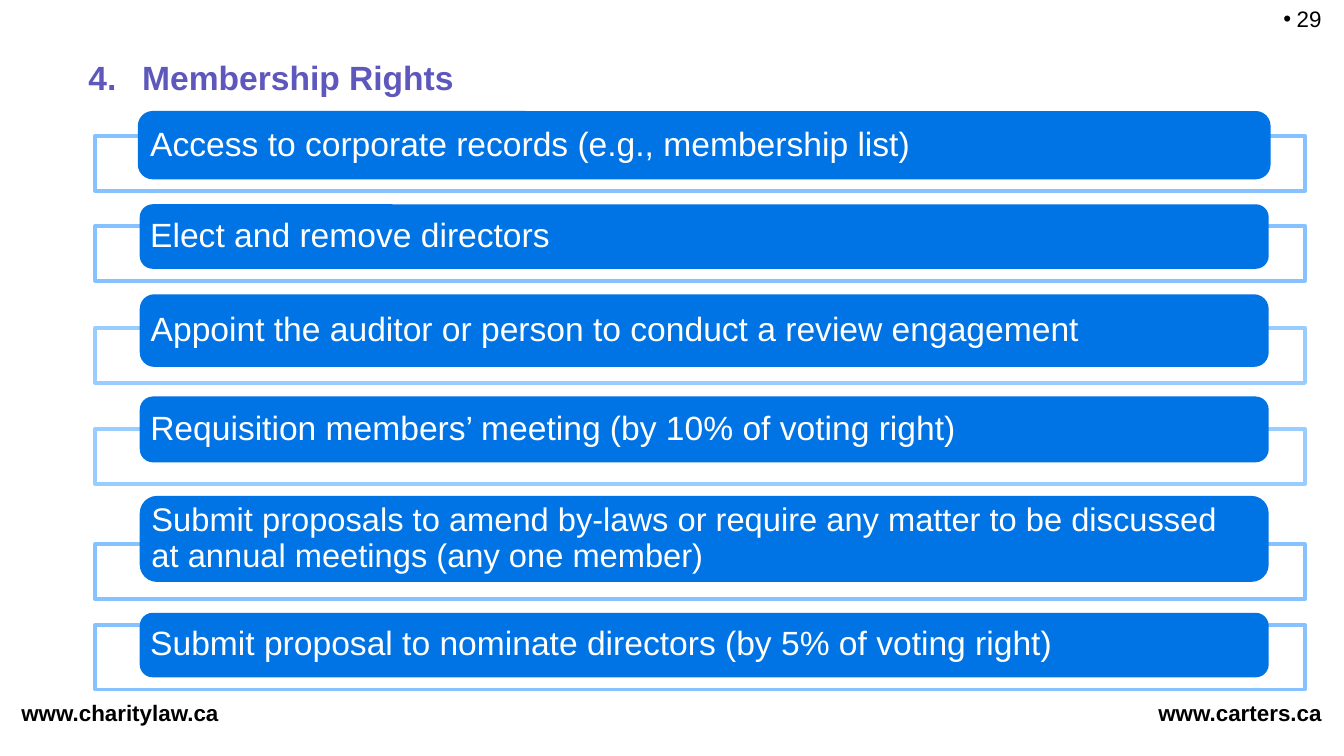
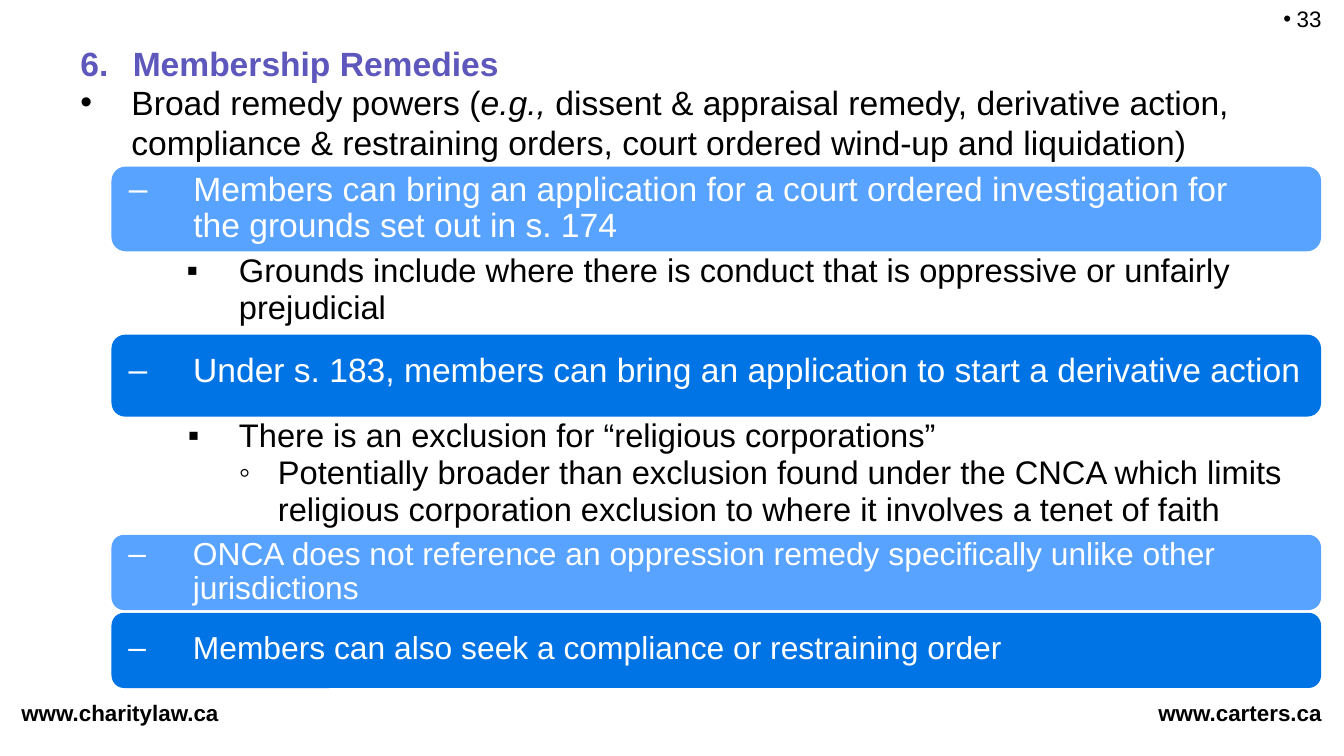
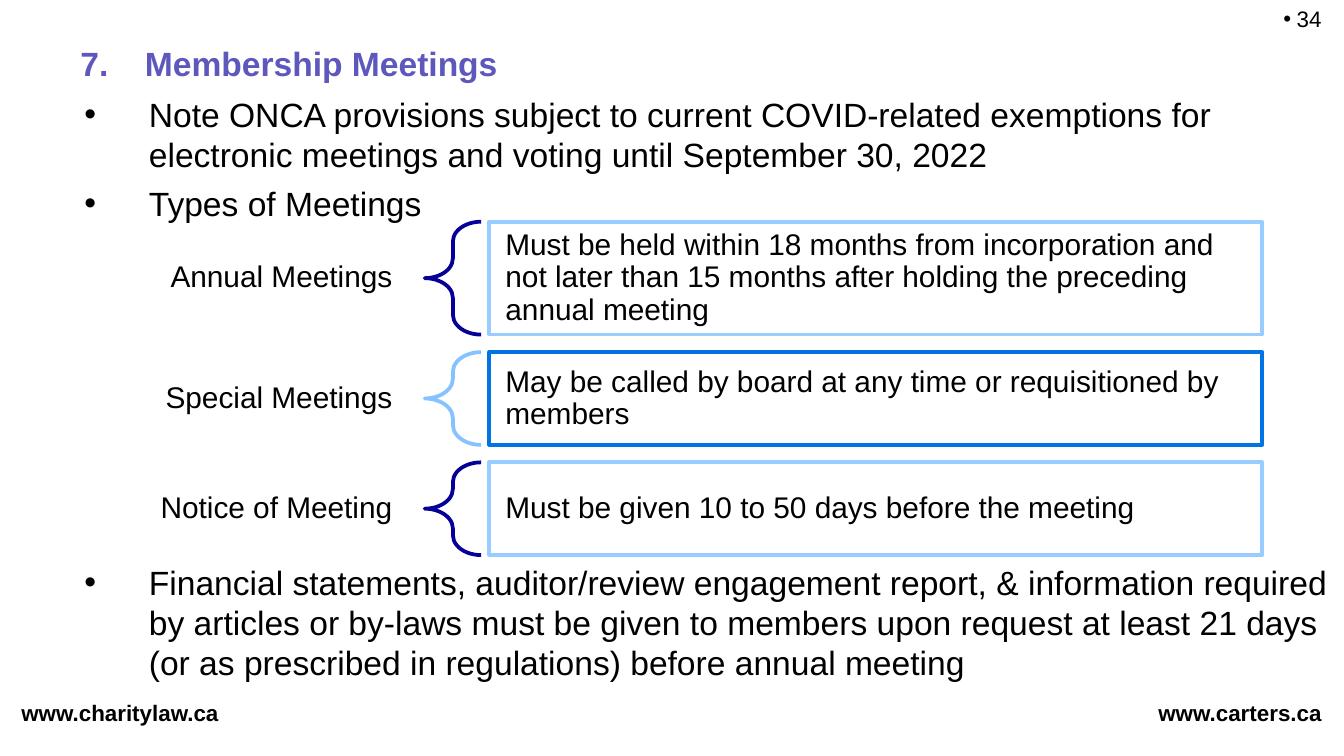
from lxml.etree import SubElement
from pptx import Presentation
from pptx.dml.color import RGBColor
from pptx.enum.shapes import MSO_SHAPE
from pptx.enum.text import MSO_ANCHOR, PP_ALIGN
from pptx.oxml.ns import qn
from pptx.util import Inches, Pt

FONT = "Arial"
BLACK = RGBColor(0x00, 0x00, 0x00)
WHITE = RGBColor(0xFF, 0xFF, 0xFF)
TITLE_PURPLE = RGBColor(0x5F, 0x58, 0xBC)
BLUE = RGBColor(0x00, 0x73, 0xE5)
MID_BLUE = RGBColor(0x58, 0xA3, 0xFF)
LIGHT_BLUE = RGBColor(0x85, 0xC2, 0xFF)
PALE_BLUE = RGBColor(0x99, 0xCC, 0xFF)
NAVY = RGBColor(0x06, 0x00, 0x99)


def format_paragraph(paragraph, size, color=BLACK, bold=False, spacing=None,
                     align=PP_ALIGN.LEFT, indent=None, bullet=None):
    """Style a paragraph and its runs; indent is (left margin, hang) in inches."""
    properties = paragraph._p.get_or_add_pPr()
    if indent:
        left, hang = indent
        properties.set("marL", str(Inches(left)))
        properties.set("indent", str(-Inches(hang)))
    if bullet:
        bullet_color = SubElement(properties, qn("a:buClr"))
        SubElement(bullet_color, qn("a:srgbClr"), val=str(color))
        SubElement(properties, qn("a:buFont"), typeface=FONT)
        SubElement(properties, qn("a:buChar"), char=bullet)
    paragraph.alignment = align
    if spacing:
        paragraph.line_spacing = spacing
    for run in paragraph.runs:
        run.font.name = FONT
        run.font.size = Pt(size)
        run.font.bold = bold
        run.font.color.rgb = color


def set_frame(frame, anchor, insets):
    frame.word_wrap = True
    frame.vertical_anchor = anchor
    (frame.margin_left, frame.margin_top,
     frame.margin_right, frame.margin_bottom) = map(Inches, insets)


def add_text(slide, box, text, size, anchor=MSO_ANCHOR.TOP,
             insets=(0.1, 0.05, 0.1, 0.05), wrap=True, **style):
    frame = slide.shapes.add_textbox(*map(Inches, box)).text_frame
    set_frame(frame, anchor, insets)
    frame.word_wrap = wrap
    frame.text = text
    format_paragraph(frame.paragraphs[0], size, **style)
    return frame


def add_figure(slide, kind, box, fill=None, outline=None):
    figure = slide.shapes.add_shape(kind, *map(Inches, box))
    figure.shadow.inherit = False
    if fill is None:
        figure.fill.background()
    else:
        figure.fill.solid()
        figure.fill.fore_color.rgb = fill
    if outline is None:
        figure.line.fill.background()
    else:
        figure.line.color.rgb = outline
        figure.line.width = Pt(2)
    return figure


def fill_figure(figure, text, size, insets, **style):
    set_frame(figure.text_frame, MSO_ANCHOR.MIDDLE, insets)
    figure.text_frame.text = text
    format_paragraph(figure.text_frame.paragraphs[0], size, spacing=0.9, **style)


def start_slide(deck, number, title, title_box, title_indent):
    """Add a slide with its web addresses, page number and title."""
    slide = deck.slides.add_slide(deck.slide_layouts[6])
    for address, left, width in (("www.carters.ca", 8.52, 1.43),
                                 ("www.charitylaw.ca", 0.06, 1.69)):
        add_text(slide, (left, 5.15, width, 0.3), address, 12, bold=True, wrap=False)
    add_text(slide, (9.45, 0.02, 0.53, 0.27), number, 12, MSO_ANCHOR.BOTTOM,
             indent=(0.1, 0.1), bullet="•")
    add_text(slide, title_box, title, 18, MSO_ANCHOR.MIDDLE, color=TITLE_PURPLE,
             bold=True, spacing=0.85, indent=(title_indent, title_indent))
    return slide


def add_right(slide, frame_box, bar_top, bar_height, text, size, outline,
              bar_outline=None):
    """An outlined frame with a rounded bar overlapping its upper edge."""
    add_figure(slide, MSO_SHAPE.RECTANGLE, frame_box, outline=outline)
    left, _, width, _ = frame_box
    bar = add_figure(slide, MSO_SHAPE.ROUNDED_RECTANGLE,
                     (left + 0.33, bar_top, width - 0.6, bar_height),
                     fill=BLUE, outline=bar_outline)
    bar.adjustments[0] = 0.2
    fill_figure(bar, text, size, (0.05, 0.04, 0.04, 0.04), color=WHITE)


def add_remedy(slide, box, text, size, fill, right_inset, lift=0):
    """A rounded band holding one dashed point."""
    band = add_figure(slide, MSO_SHAPE.ROUNDED_RECTANGLE, box, fill=fill)
    fill_figure(band, text, size, (0.1, 0.04, right_inset, 0.04 + lift),
                color=WHITE, indent=(0.48, 0.48), bullet="‒")


def add_meeting(slide, box, name, rule, brace_color, rule_color):
    """A meeting type, a brace and the rule that applies to it."""
    left, top, width, height = box
    add_text(slide, (left, top, 2.11, height), name, 16, MSO_ANCHOR.MIDDLE,
             (0.12, 0.04, 0.12, 0.04), align=PP_ALIGN.RIGHT, spacing=0.9)
    brace = add_figure(slide, MSO_SHAPE.LEFT_BRACE,
                       (left + 2.23, top, 0.42, height), outline=brace_color)
    brace.adjustments[0] = 0.35
    rule_box = add_figure(slide, MSO_SHAPE.RECTANGLE,
                          (left + 2.71, top, width - 2.71, height), outline=rule_color)
    fill_figure(rule_box, rule, 16, (0.12, 0.07, 0.07, 0.07))


def build_rights(deck):
    slide = start_slide(deck, "29", "4. \tMembership Rights",
                        (0.56, 0.37, 6.86, 0.46), 0.4)
    # frame top, frame height, bar top, bar height, text, size, outline, bar outline
    rights = (
        (1.01, 0.41, 0.84, 0.48, "Access to corporate records (e.g., membership list)",
         18, LIGHT_BLUE, BLUE),
        (1.68, 0.41, 1.52, 0.48, "Elect and remove directors", 18, LIGHT_BLUE),
        (2.44, 0.41, 2.19, 0.54,
         "Appoint the auditor or person to conduct a review engagement", 18, PALE_BLUE),
        (3.19, 0.41, 2.95, 0.49,
         "Requisition members’ meeting (by 10% of voting right)", 18, PALE_BLUE),
        (4.05, 0.41, 3.69, 0.64,
         "Submit proposals to amend by-laws or require any matter to be discussed "
         "\vat annual meetings (any one member)", 17.5, LIGHT_BLUE),
        (4.65, 0.48, 4.56, 0.48,
         "Submit proposal to nominate directors (by 5% of voting right)", 18, LIGHT_BLUE),
    )
    for frame_top, frame_height, *bar in rights:
        add_right(slide, (0.71, frame_top, 9, frame_height), *bar)


def build_remedies(deck):
    slide = start_slide(deck, "33", "6. \tMembership Remedies",
                        (0.5, 0.23, 7.13, 0.52), 0.39)

    # Opening point, with its italic abbreviation
    opening = add_text(slide, (0.5, 0.56, 9, 0.63), "Broad remedy powers (", 18)
    powers = opening.paragraphs[0]
    abbreviation, remainder = powers.add_run(), powers.add_run()
    abbreviation.text = "e.g., "
    abbreviation.font.italic = True
    remainder.text = ("dissent & appraisal remedy, derivative action, compliance & "
                      "restraining orders, court ordered wind-up and liquidation)")
    format_paragraph(powers, 18, indent=(0.38, 0.38), bullet="•")

    # Bands: top, height, text, size, fill, right inset, lift
    remedies = (
        (1.24, 0.63, "Members can bring an application for a court ordered "
         "investigation for the grounds set out in s. 174", 18, MID_BLUE, 0.28, 0),
        (2.49, 0.61, "Under s. 183, members can bring an application to start a "
         "derivative action", 18, BLUE, 0.02, 0.06),
        (3.98, 0.56, "ONCA does not reference an oppression remedy specifically "
         "unlike other jurisdictions", 17, MID_BLUE, 0.15, 0),
        (4.56, 0.56, "Members can also seek a compliance or restraining order",
         17, BLUE, 0.3, 0.02),
    )
    for top, height, *content in remedies:
        add_remedy(slide, (0.83, top, 9, height), *content)

    # Details between the bands
    add_text(slide, (0.5, 1.83, 9.33, 0.68),
             "Grounds include where there is conduct that is oppressive or unfairly "
             "prejudicial", 17.5, spacing=0.95, indent=(1.18, 0.39), bullet="▪")
    exclusion = add_text(slide, (0.5, 3.06, 9.5, 0.96),
                         "There is an exclusion for “religious corporations”", 17.5,
                         spacing=0.95, indent=(1.18, 0.38), bullet="▪")
    comparison = exclusion.add_paragraph()
    comparison.text = ("Potentially broader than exclusion found under the CNCA which "
                       "limits religious corporation exclusion to where it involves a "
                       "tenet of faith")
    format_paragraph(comparison, 17.5, spacing=0.95, indent=(1.47, 0.29), bullet="◦")


def build_meetings(deck):
    slide = start_slide(deck, "34", "7. \tMembership Meetings",
                        (0.5, 0.27, 8.62, 0.45), 0.48)
    point_style = dict(indent=(0.48, 0.48), bullet="•")

    # Points above and below the meeting types
    notes = add_text(slide, (0.53, 0.65, 9.47, 1),
                     "Note ONCA provisions subject to current COVID-related exemptions "
                     "for electronic meetings and voting until September 30, 2022",
                     18, **point_style)
    types = notes.add_paragraph()
    types.text = "Types of Meetings"
    format_paragraph(types, 18, **point_style)
    types.space_before = Pt(4.5)
    add_text(slide, (0.53, 4.13, 9.47, 1),
             "Financial statements, auditor/review engagement report, & information "
             "required by articles or by-laws must be given to members upon request at "
             "least 21 days (or as prescribed in regulations) before annual meeting",
             18, **point_style)

    # Meeting types, stacked with an equal gap
    meetings = (
        (0.84, "Annual Meetings", "Must be held within 18 months from incorporation and "
         "not later than 15 months after holding the preceding annual meeting",
         NAVY, PALE_BLUE),
        (0.69, "Special Meetings", "May be called by board at any time or requisitioned "
         "by members", LIGHT_BLUE, BLUE),
        (0.69, "Notice of Meeting", "Must be given 10 to 50 days before the meeting",
         NAVY, PALE_BLUE),
    )
    top, gap = 1.65, 0.13
    for height, *content in meetings:
        add_meeting(slide, (0.93, top, 8.46, height), *content)
        top += height + gap


def main():
    deck = Presentation()
    deck.slide_width = Inches(10)
    deck.slide_height = deck.slide_width * 9 // 16
    build_rights(deck)
    build_remedies(deck)
    build_meetings(deck)
    deck.save("out.pptx")


if __name__ == "__main__":
    main()
